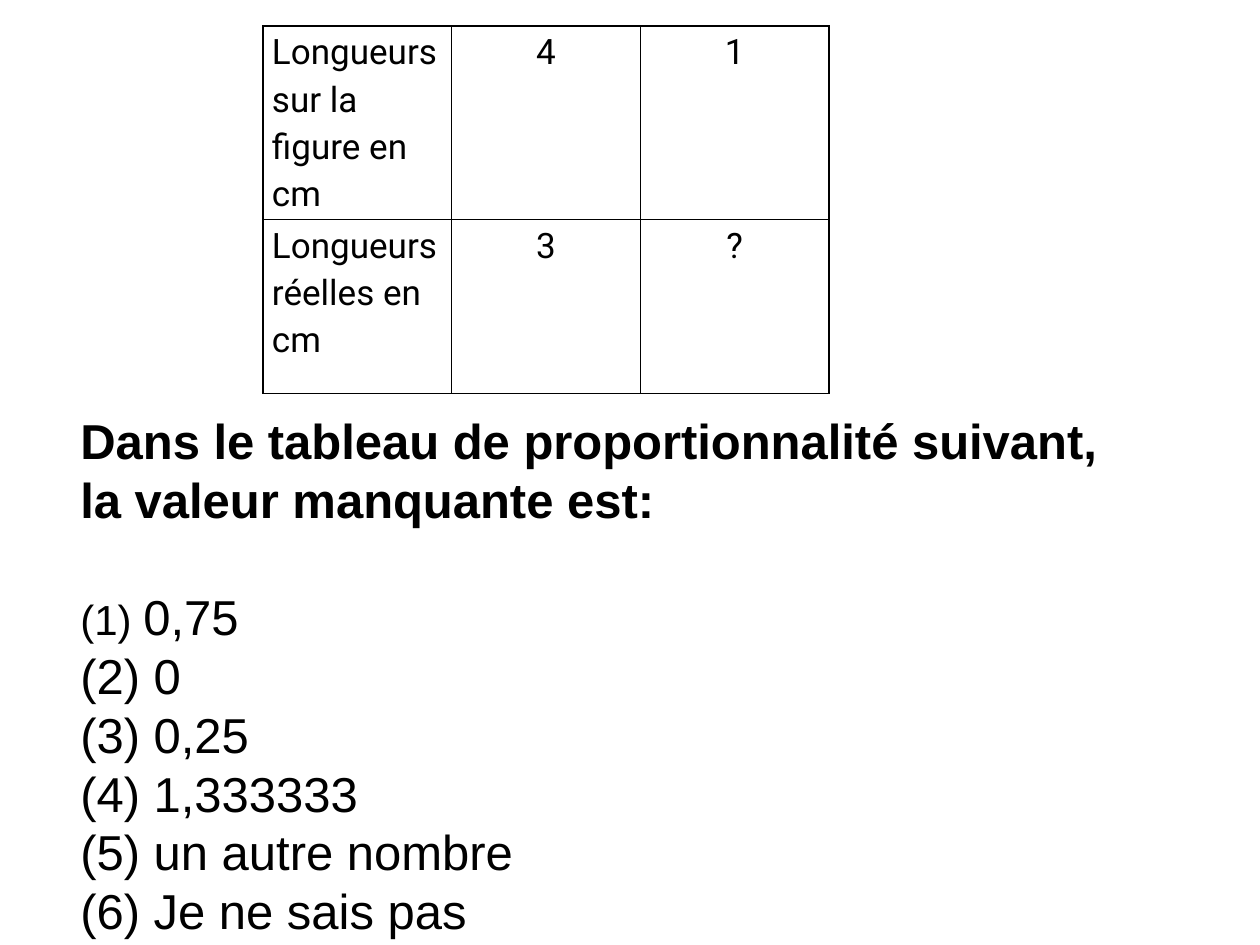
from lxml import etree
from pptx import Presentation
from pptx import util as u
from pptx.dml.color import RGBColor
from pptx.enum import text
from pptx.oxml import ns

EMU_PER_PX = 914400 / 126
BLACK = RGBColor(0, 0, 0)


def px(length):
    return u.Emu(round(length * EMU_PER_PX))


def style(run, font_name, size, bold=False):
    run.font.name = font_name
    run.font.size = u.Pt(size)
    run.font.bold = bold
    run.font.color.rgb = BLACK


prs = Presentation()
prs.slide_width, prs.slide_height = px(1260), px(945)
slide = prs.slides.add_slide(prs.slide_layouts[6])

question_box = slide.shapes.add_textbox(px(68), px(404), px(1111), px(699))
question = question_box.text_frame
question.word_wrap = True
question_lines = [
    "Dans le tableau de proportionnalité suivant,",
    "la valeur manquante est:",
]
answers = ["0,75", "0", "0,25", "1,333333", "un autre nombre", "Je ne sais pas"]
question.text = "\n".join(question_lines + [" " + answer for answer in answers])

for index, paragraph in enumerate(question.paragraphs):
    answer_number = index - len(question_lines)
    is_answer = answer_number >= 0
    paragraph.space_before = u.Pt(33.5 if answer_number == 0 else 0)
    if is_answer:
        properties = paragraph._p.get_or_add_pPr()
        properties.set("marL", str(px(48)))
        properties.set("indent", str(-px(48)))
        numbering = etree.SubElement(properties, ns.qn("a:buAutoNum"))
        numbering.set("type", "arabicParenBoth")
    if answer_number == 0:
        paragraph.runs[0].text = " "
        paragraph.add_run().text = answers[0]
    for run in paragraph.runs:
        style(run, "Arial", 24 if run.text == " " else 28, bold=not is_answer)

lengths = [
    ["Longueurs sur la figure en cm", "4", "1"],
    ["Longueurs réelles en cm", "3", "?"],
]
table = slide.shapes.add_table(2, 3, px(263), px(26), px(566), px(367)).table
table.first_row = table.horz_banding = False
for row, height in zip(table.rows, (193, 174)):
    row.height = px(height)

for row, values in zip(table.rows, lengths):
    for column_index, (cell, value) in enumerate(zip(row.cells, values)):
        cell.margin_left = cell.margin_right = px(9)
        cell.margin_top = cell.margin_bottom = 0
        cell.text_frame.text = value
        paragraph = cell.text_frame.paragraphs[0]
        paragraph.line_spacing = 1.15
        if column_index > 0:
            paragraph.alignment = text.PP_ALIGN.CENTER
        style(paragraph.runs[0], "Roboto", 20)
        cell_properties = cell._tc.get_or_add_tcPr()
        for side in ("lnL", "lnR", "lnT", "lnB"):
            border = etree.SubElement(cell_properties, ns.qn("a:" + side))
            border.set("w", str(u.Pt(1)))
            border_fill = etree.SubElement(border, ns.qn("a:solidFill"))
            etree.SubElement(border_fill, ns.qn("a:srgbClr")).set("val", str(BLACK))
        cell.fill.background()

prs.save("out.pptx")
